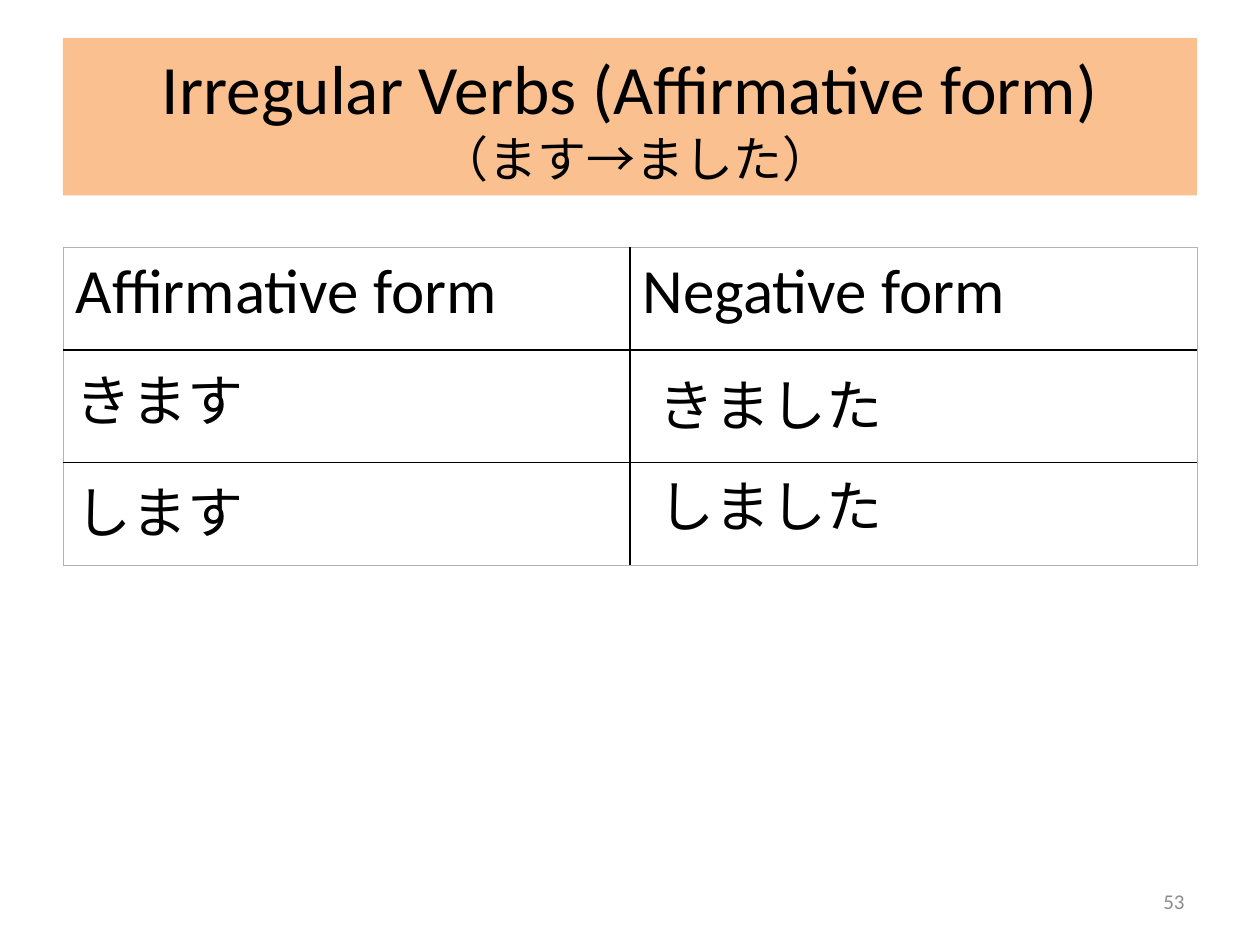
from dataclasses import dataclass

from lxml.etree import SubElement
from pptx import Presentation
from pptx.dml.color import RGBColor
from pptx.enum.shapes import MSO_SHAPE
from pptx.enum.text import MSO_ANCHOR, PP_ALIGN
from pptx.oxml.ns import qn
from pptx.util import Inches, Pt

LATIN = "Calibri"
JAPANESE = "Noto Sans CJK JP"
BLACK = "000000"
GREY = "B2B2B2"


@dataclass
class Label:
    text: str
    left: float
    top: float
    width: float
    height: float
    size: float
    font: str
    color: str = BLACK
    align: PP_ALIGN = PP_ALIGN.LEFT
    anchor: MSO_ANCHOR = MSO_ANCHOR.TOP


LABELS = [
    Label("53", 7.17, 6.95, 2.33, 0.4, 12, LATIN, "8C8C8C", PP_ALIGN.RIGHT, MSO_ANCHOR.MIDDLE),
    Label("きました", 5.13, 2.89, 3.05, 0.64, 32, JAPANESE),
    Label("しました", 5.13, 3.69, 3.05, 0.64, 32, JAPANESE),
]
VERB_ROWS = [("Affirmative form", "Negative form"), ("きます", ""), ("します", "")]
ROW_HEIGHTS = [0.82, 0.89, 0.82]


def rgb(color: str) -> RGBColor:
    return RGBColor.from_string(color)


def format_span(span, size: float, font: str, color: str = BLACK) -> None:
    span.font.size = Pt(size)
    span.font.name = font
    span.font.color.rgb = rgb(color)
    if font == JAPANESE:
        SubElement(span.font._element, qn("a:ea"), typeface=font)


def add_title(page) -> None:
    box = page.shapes.add_shape(
        MSO_SHAPE.RECTANGLE, Inches(0.5), Inches(0.3), Inches(9), Inches(1.25))
    box.shadow.inherit = False
    box.fill.solid()
    box.fill.fore_color.rgb = rgb("FAC090")
    box.line.fill.background()
    box.text_frame.vertical_anchor = MSO_ANCHOR.MIDDLE
    para = box.text_frame.paragraphs[0]
    para.text = "Irregular Verbs (Affirmative form)\v （ます→ました）"
    para.alignment = PP_ALIGN.CENTER
    heading, pattern = para.runs
    format_span(heading, 39.6, LATIN)
    format_span(pattern, 28, JAPANESE)


def add_label(page, label: Label) -> None:
    box = page.shapes.add_textbox(
        Inches(label.left), Inches(label.top), Inches(label.width), Inches(label.height))
    frame = box.text_frame
    frame.word_wrap = True
    frame.vertical_anchor = label.anchor
    frame.text = label.text
    para = frame.paragraphs[0]
    para.alignment = label.align
    format_span(para.runs[0], label.size, label.font, label.color)


def set_border(cell, side: str, color: str, width: float) -> None:
    line = SubElement(cell._tc.get_or_add_tcPr(), qn(f"a:{side}"), w=str(Pt(width)))
    fill = SubElement(line, qn("a:solidFill"))
    SubElement(fill, qn("a:srgbClr"), val=color)


def add_verb_table(page) -> None:
    row_count, column_count = len(VERB_ROWS), len(VERB_ROWS[0])
    table = page.shapes.add_table(
        row_count, column_count, Inches(0.5), Inches(1.96),
        Inches(9), Inches(sum(ROW_HEIGHTS))).table
    table.first_row = False
    table.horz_banding = False
    for row_index, (texts, height) in enumerate(zip(VERB_ROWS, ROW_HEIGHTS)):
        table.rows[row_index].height = Inches(height)
        size, font = (36, LATIN) if row_index == 0 else (32, JAPANESE)
        for column_index, text in enumerate(texts):
            cell = table.cell(row_index, column_index)
            outer_sides = {
                "lnL": column_index == 0,
                "lnR": column_index == column_count - 1,
                "lnT": row_index == 0,
                "lnB": row_index == row_count - 1,
            }
            for side, is_outer in outer_sides.items():
                set_border(cell, side, GREY if is_outer else BLACK, 0.5 if is_outer else 1)
            cell.fill.background()
            if text:
                cell.text_frame.text = text
                format_span(cell.text_frame.paragraphs[0].runs[0], size, font)


def main() -> None:
    deck = Presentation()
    deck.slide_width = Inches(10)
    deck.slide_height = Inches(7.5)
    page = deck.slides.add_slide(deck.slide_layouts[6])
    add_title(page)
    add_verb_table(page)
    for label in LABELS:
        add_label(page, label)
    deck.save("out.pptx")


if __name__ == "__main__":
    main()
